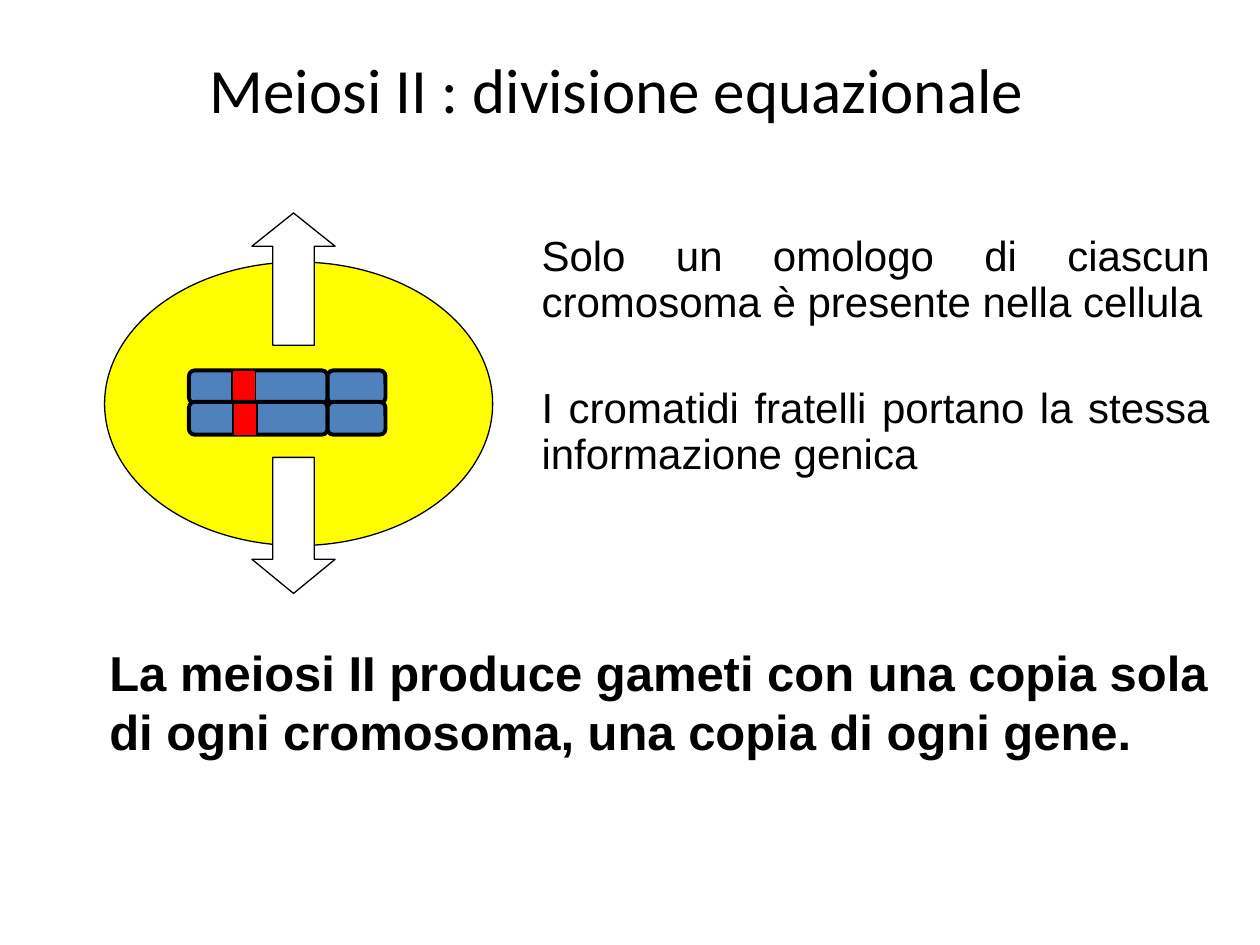
from pptx import Presentation
from pptx.dml.color import RGBColor
from pptx.enum.shapes import MSO_SHAPE
from pptx.enum.text import MSO_ANCHOR, PP_ALIGN
from pptx.util import Inches, Pt

BLACK = RGBColor(0x00, 0x00, 0x00)
WHITE = RGBColor(0xFF, 0xFF, 0xFF)
YELLOW = RGBColor(0xFF, 0xFF, 0x00)
BLUE = RGBColor(0x4F, 0x81, 0xBD)
RED = RGBColor(0xFF, 0x00, 0x00)


def add_run(paragraph, text, size, font="Arial", bold=False):
    run = paragraph.add_run()
    run.text = text
    run.font.name = font
    run.font.size = Pt(size)
    run.font.bold = bold
    run.font.color.rgb = BLACK


def add_outlined(slide, kind, left, top, width, height, fill, line=0.75, adjustments=()):
    shape = slide.shapes.add_shape(
        kind, Inches(left), Inches(top), Inches(width), Inches(height))
    shape.shadow.inherit = False
    shape.fill.solid()
    shape.fill.fore_color.rgb = fill
    shape.line.color.rgb = BLACK
    shape.line.width = Pt(line)
    for index, value in enumerate(adjustments):
        shape.adjustments[index] = value


def place_title(slide, left, top, width, height):
    title = slide.shapes.title
    title.left, title.top = Inches(left), Inches(top)
    title.width, title.height = Inches(width), Inches(height)
    title.text_frame.vertical_anchor = MSO_ANCHOR.MIDDLE
    paragraph = title.text_frame.paragraphs[0]
    paragraph.alignment = PP_ALIGN.CENTER
    add_run(paragraph, "Meiosi II : divisione equazionale", 36, "Calibri")


def add_chromatid(slide, left, top, height, gene_left, gene_top, gene_height):
    # Long arm and short arm meet at the centromere
    long_arm, short_arm = 1.1, 0.46
    for arm_left, width in ((left, long_arm), (left + long_arm, short_arm)):
        add_outlined(slide, MSO_SHAPE.ROUNDED_RECTANGLE, arm_left, top, width, height,
                     BLUE, 2.25, [0.17])
    # Gene band
    add_outlined(slide, MSO_SHAPE.RECTANGLE, gene_left, gene_top, 0.19, gene_height, RED)


def add_cell(slide, left, top, width, height):
    add_outlined(slide, MSO_SHAPE.OVAL, left, top, width, height, YELLOW)
    # Sister chromatids
    chromatid_left = left + 0.67
    add_chromatid(slide, chromatid_left, top + 0.86, 0.26, left + 1.01, top + 0.86, 0.24)
    add_chromatid(slide, chromatid_left, top + 1.11, 0.26, left + 1.02, top + 1.12, 0.26)
    # Arrows towards the two poles
    arrow_left, arrow_width = left + 1.17, 0.66
    add_outlined(slide, MSO_SHAPE.UP_ARROW, arrow_left, top - 0.39, arrow_width, 1.05,
                 WHITE, adjustments=[0.5, 0.4])
    add_outlined(slide, MSO_SHAPE.DOWN_ARROW, arrow_left, top + 1.55, arrow_width, 1.08,
                 WHITE, adjustments=[0.5, 0.41])


def add_text(slide, left, top, width, height, texts, size, bold=False,
             alignment=PP_ALIGN.LEFT, line_spacing=1.0, gap=0):
    box = slide.shapes.add_textbox(
        Inches(left), Inches(top), Inches(width), Inches(height))
    frame = box.text_frame
    frame.word_wrap = True
    for index, text in enumerate(texts):
        paragraph = frame.add_paragraph() if index else frame.paragraphs[0]
        paragraph.alignment = alignment
        paragraph.line_spacing = line_spacing
        paragraph.space_before = Pt(gap if index else 0)
        add_run(paragraph, text, size, bold=bold)


def main():
    presentation = Presentation()
    presentation.slide_width = Inches(10)
    presentation.slide_height = Inches(7.5)
    slide = presentation.slides.add_slide(presentation.slide_layouts[5])

    place_title(slide, 0.13, 0.08, 9.53, 1.25)
    add_cell(slide, 0.83, 2.08, 3.08, 2.25)
    # Conclusion
    add_text(slide, 0.77, 5.05, 9.07, 1.03,
             ["La meiosi II produce gameti con una copia sola di ogni cromosoma, "
              "una copia di ogni gene."], 28, bold=True)
    # Explanation beside the cell
    add_text(slide, 4.2, 1.82, 5.5, 2.08,
             ["Solo un omologo di ciascun cromosoma è presente nella cellula",
              "I cromatidi fratelli portano la stessa informazione genica"],
             24, alignment=PP_ALIGN.JUSTIFY, line_spacing=0.9, gap=35)

    presentation.save("out.pptx")


if __name__ == "__main__":
    main()
